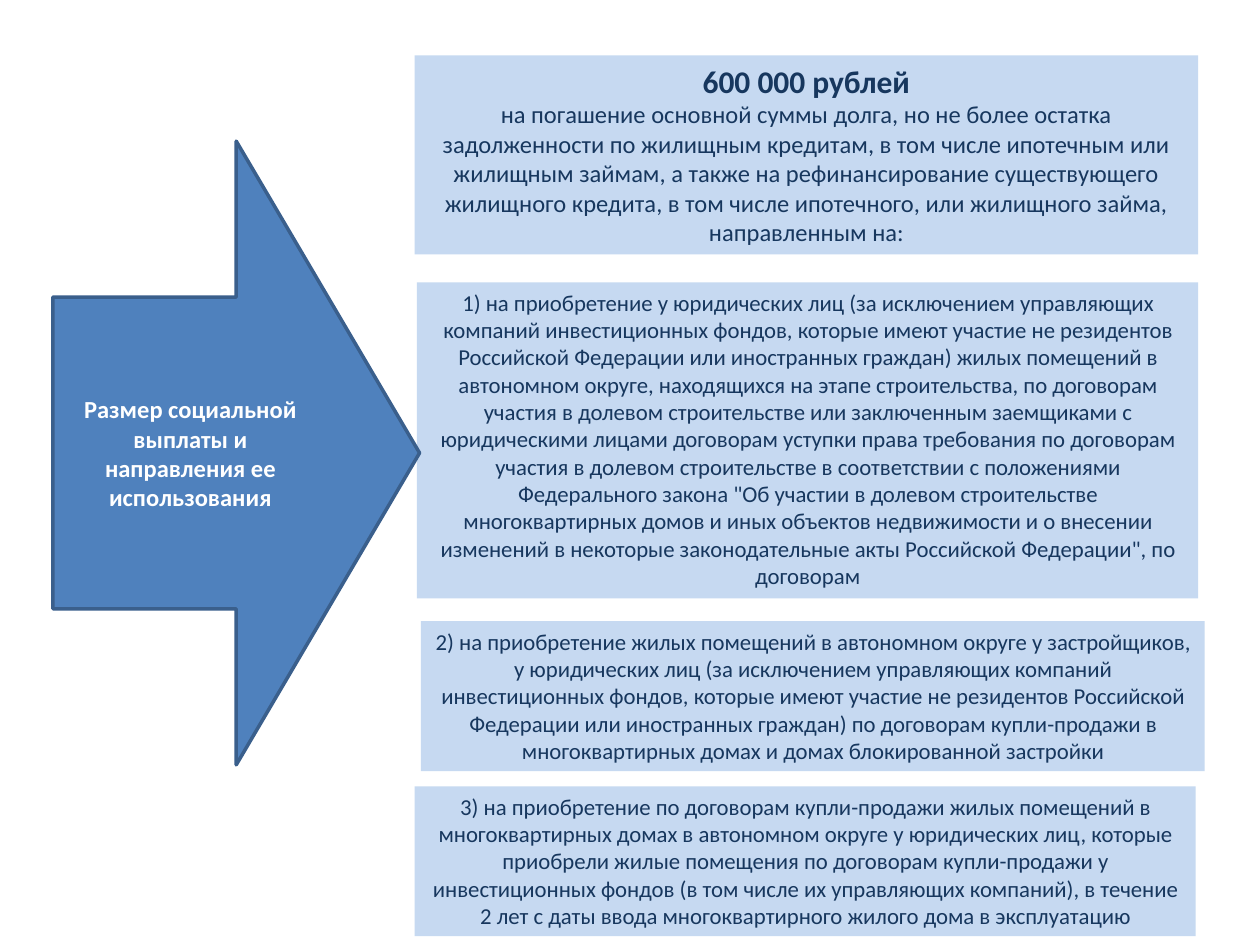
"""Build a slide on the size of a social payment and the ways it may be used."""
import pptx
import pptx.util
import pptx.dml.color
import pptx.enum.shapes
import pptx.enum.text

Inches = pptx.util.Inches
RGBColor = pptx.dml.color.RGBColor
SHAPES = pptx.enum.shapes.MSO_SHAPE
ANCHOR = pptx.enum.text.MSO_ANCHOR

PALE_BLUE = RGBColor(0xC6, 0xD9, 0xF1)
NAVY = RGBColor(0x17, 0x37, 0x5E)
BLUE = RGBColor(0x4F, 0x81, 0xBD)
DARK_BLUE = RGBColor(0x3A, 0x5F, 0x8C)
WHITE = RGBColor(0xFF, 0xFF, 0xFF)
FONT = "Calibri"

PANELS = [
    ((3.31, 2.24, 6.2, 2.51), [
        ("1) на приобретение у юридических лиц (за исключением управляющих "
         "компаний инвестиционных фондов, которые имеют участие не резидентов "
         "Российской Федерации или иностранных граждан) жилых помещений в "
         "автономном округе, находящихся на этапе строительства, по договорам "
         "участия в долевом строительстве или заключенным заемщиками с "
         "юридическими лицами договорам уступки права требования по договорам "
         "участия в долевом строительстве в соответствии с положениями "
         'Федерального закона "Об участии в долевом строительстве '
         "многоквартирных домов и иных объектов недвижимости и о внесении "
         'изменений в некоторые законодательные акты Российской Федерации", по '
         "договорам", 13, False)]),
    ((3.29, 0.44, 6.22, 1.58), [
        ("600 000 рублей", 18, True),
        ("на погашение основной суммы долга, но не более остатка "
         "задолженности по жилищным кредитам, в том числе ипотечным или "
         "жилищным займам, а также на рефинансирование существующего "
         "жилищного кредита, в том числе ипотечного, или жилищного займа, "
         "направленным на:", 14, False)]),
    ((3.34, 4.93, 6.22, 1.19), [
        ("2) на приобретение жилых помещений в автономном округе у застройщиков, "
         "у юридических лиц (за исключением управляющих компаний "
         "инвестиционных фондов, которые имеют участие не резидентов Российской "
         "Федерации или иностранных граждан) по договорам купли-продажи в "
         "многоквартирных домах и домах блокированной застройки", 13, False)]),
    ((3.29, 6.24, 6.2, 1.19), [
        ("3) на приобретение по договорам купли-продажи жилых помещений в "
         "многоквартирных домах в автономном округе у юридических лиц, которые "
         "приобрели жилые помещения по договорам купли-продажи у "
         "инвестиционных фондов (в том числе их управляющих компаний), в течение "
         "2 лет с даты ввода многоквартирного жилого дома в эксплуатацию",
         13, False)]),
]
ARROW_BOX = (0.42, 1.12, 2.91, 4.95)
ARROW_TEXT = [("Размер социальной выплаты и направления ее использования", 14, True)]


def add_block(slide, kind, box, paragraphs, fill, color, anchor):
    shape = slide.shapes.add_shape(kind, *map(Inches, box))
    shape.shadow.inherit = False
    shape.fill.solid()
    shape.fill.fore_color.rgb = fill
    shape.line.fill.background()
    frame = shape.text_frame
    frame.word_wrap = True
    frame.vertical_anchor = anchor
    for index, (text, size, bold) in enumerate(paragraphs):
        paragraph = frame.add_paragraph() if index else frame.paragraphs[0]
        paragraph.alignment = pptx.enum.text.PP_ALIGN.CENTER
        run = paragraph.add_run()
        run.text = text
        run.font.name = FONT
        run.font.size = pptx.util.Pt(size)
        run.font.bold = bold
        run.font.color.rgb = color
    return shape


def add_panel(slide, box, paragraphs):
    panel = add_block(slide, SHAPES.RECTANGLE, box, paragraphs,
                      PALE_BLUE, NAVY, ANCHOR.TOP)
    panel.text_frame.auto_size = pptx.enum.text.MSO_AUTO_SIZE.SHAPE_TO_FIT_TEXT


def add_arrow(slide):
    arrow = add_block(slide, SHAPES.RIGHT_ARROW, ARROW_BOX, ARROW_TEXT,
                      BLUE, WHITE, ANCHOR.MIDDLE)
    arrow.line.color.rgb = DARK_BLUE
    arrow.line.width = pptx.util.Pt(2)


def main():
    presentation = pptx.Presentation()
    presentation.slide_width = Inches(10)
    presentation.slide_height = Inches(7.5)
    slide = presentation.slides.add_slide(presentation.slide_layouts[6])
    for box, paragraphs in PANELS[:2]:
        add_panel(slide, box, paragraphs)
    add_arrow(slide)
    for box, paragraphs in PANELS[2:]:
        add_panel(slide, box, paragraphs)
    presentation.save("out.pptx")


if __name__ == "__main__":
    main()
